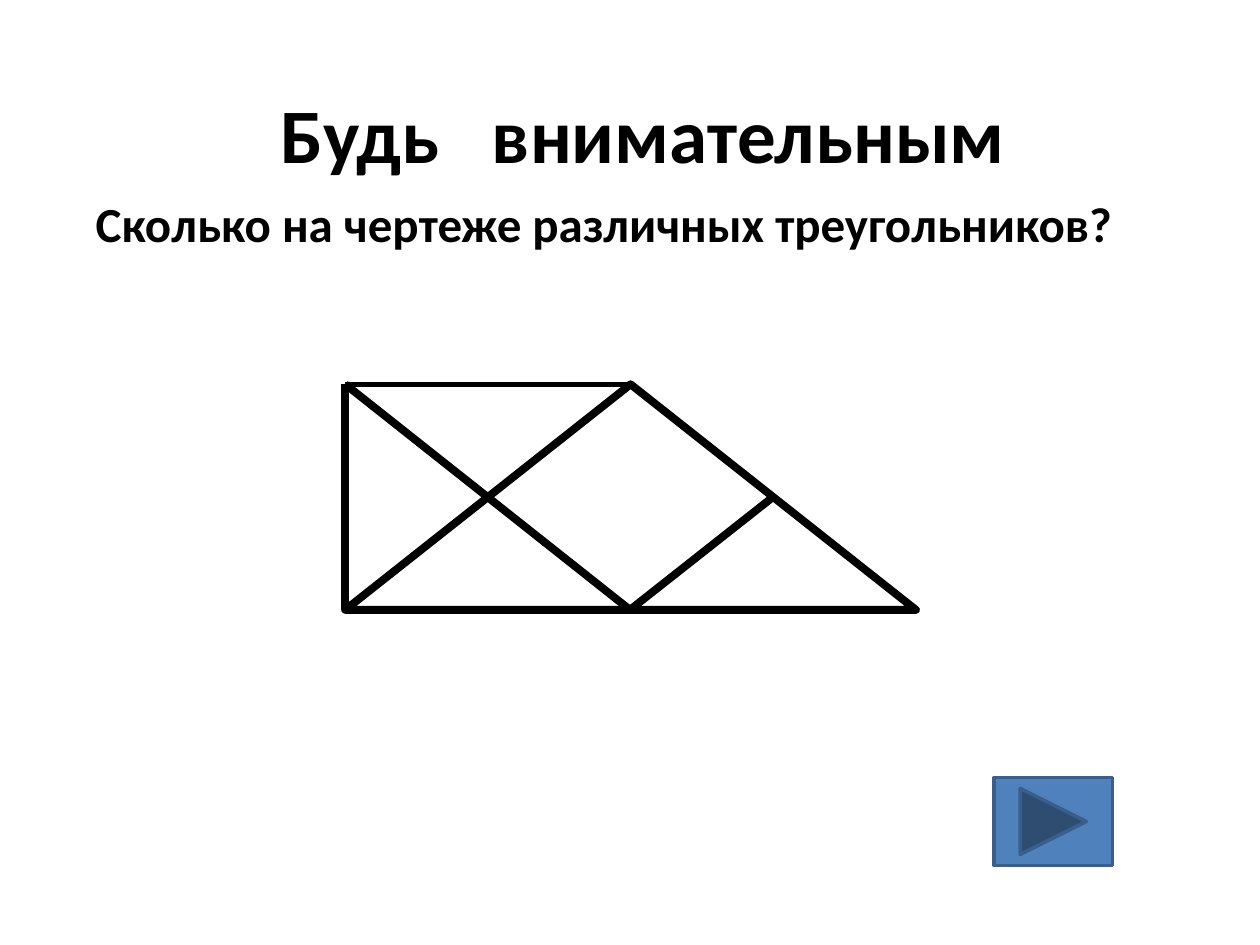
from dataclasses import dataclass

from lxml.etree import SubElement
from pptx import Presentation
from pptx.dml.color import RGBColor
from pptx.enum.shapes import MSO_CONNECTOR, MSO_SHAPE
from pptx.enum.text import MSO_ANCHOR, PP_ALIGN
from pptx.oxml.ns import qn
from pptx.util import Inches, Pt

COLORS = {"ink": "000000", "button": "4F81BD", "button_edge": "3A5F8C"}
FONT = "Calibri"
LEFT, MIDDLE, RIGHT = 2.74, 5.0, 7.27
TOP, BOTTOM = 3.05, 4.84


@dataclass(frozen=True)
class Segment:
    start: tuple[float, float]
    end: tuple[float, float]
    width: float = 4.5


SEGMENTS = [
    Segment((LEFT, TOP), (LEFT, BOTTOM)),
    Segment((LEFT, TOP), (MIDDLE, TOP), 3),
    Segment((LEFT, TOP), (MIDDLE, BOTTOM)),
    Segment((MIDDLE, BOTTOM), ((MIDDLE + RIGHT) / 2, (TOP + BOTTOM) / 2)),
]


def color(name: str) -> RGBColor:
    return RGBColor.from_string(COLORS[name])


def style_line(line, name: str, width: float) -> None:
    line.color.rgb = color(name)
    line.width = Pt(width)


def draw_segment(slide, segment: Segment) -> None:
    ends = [Inches(value) for value in (*segment.start, *segment.end)]
    connector = slide.shapes.add_connector(MSO_CONNECTOR.STRAIGHT, *ends)
    style_line(connector.line, "ink", segment.width)
    SubElement(connector._element.spPr, qn("a:effectLst"))


def add_shape(slide, kind: MSO_SHAPE, box: tuple, edge: str, width: float):
    shape = slide.shapes.add_shape(kind, *map(Inches, box))
    shape.shadow.inherit = False
    shape.fill.background()
    style_line(shape.line, edge, width)
    return shape


def add_run(paragraph, text: str, size: float):
    run = paragraph.add_run()
    run.text = text
    run.font.name = FONT
    run.font.size = Pt(size)
    run.font.bold = True
    run.font.color.rgb = color("ink")
    return run


def set_title(slide) -> None:
    title = slide.shapes.title
    title.left, title.top = Inches(2.13), Inches(0.64)
    title.width, title.height = Inches(6.23), Inches(0.84)
    frame = title.text_frame
    frame.word_wrap = False
    frame.vertical_anchor = MSO_ANCHOR.TOP
    heading = frame.paragraphs[0]
    heading.alignment = PP_ALIGN.LEFT
    add_run(heading, "Будь", 44)
    gap = add_run(heading, " ", 44)
    gap._r.get_or_add_rPr().set("spc", "2000")
    add_run(heading, "внимательным", 44)


def add_question(slide) -> None:
    box = slide.shapes.add_textbox(Inches(0.51), Inches(1.49), Inches(9.22), Inches(0.57))
    frame = box.text_frame
    frame.word_wrap = True
    frame.margin_left = Inches(0.25)
    add_run(frame.paragraphs[0], "Сколько на чертеже различных треугольников?", 28)


def main() -> None:
    deck = Presentation()
    deck.slide_width, deck.slide_height = Inches(10), Inches(7.5)
    slide = deck.slides.add_slide(deck.slide_layouts[5])
    add_shape(slide, MSO_SHAPE.ISOSCELES_TRIANGLE,
              (LEFT, TOP, RIGHT - LEFT, BOTTOM - TOP), "ink", 4.5)
    for segment in SEGMENTS:
        draw_segment(slide, segment)
    set_title(slide)
    add_question(slide)
    button = add_shape(slide, MSO_SHAPE.ACTION_BUTTON_FORWARD_OR_NEXT,
                       (7.89, 6.17, 0.94, 0.7), "button_edge", 2)
    button.fill.solid()
    button.fill.fore_color.rgb = color("button")
    deck.save("out.pptx")


if __name__ == "__main__":
    main()
